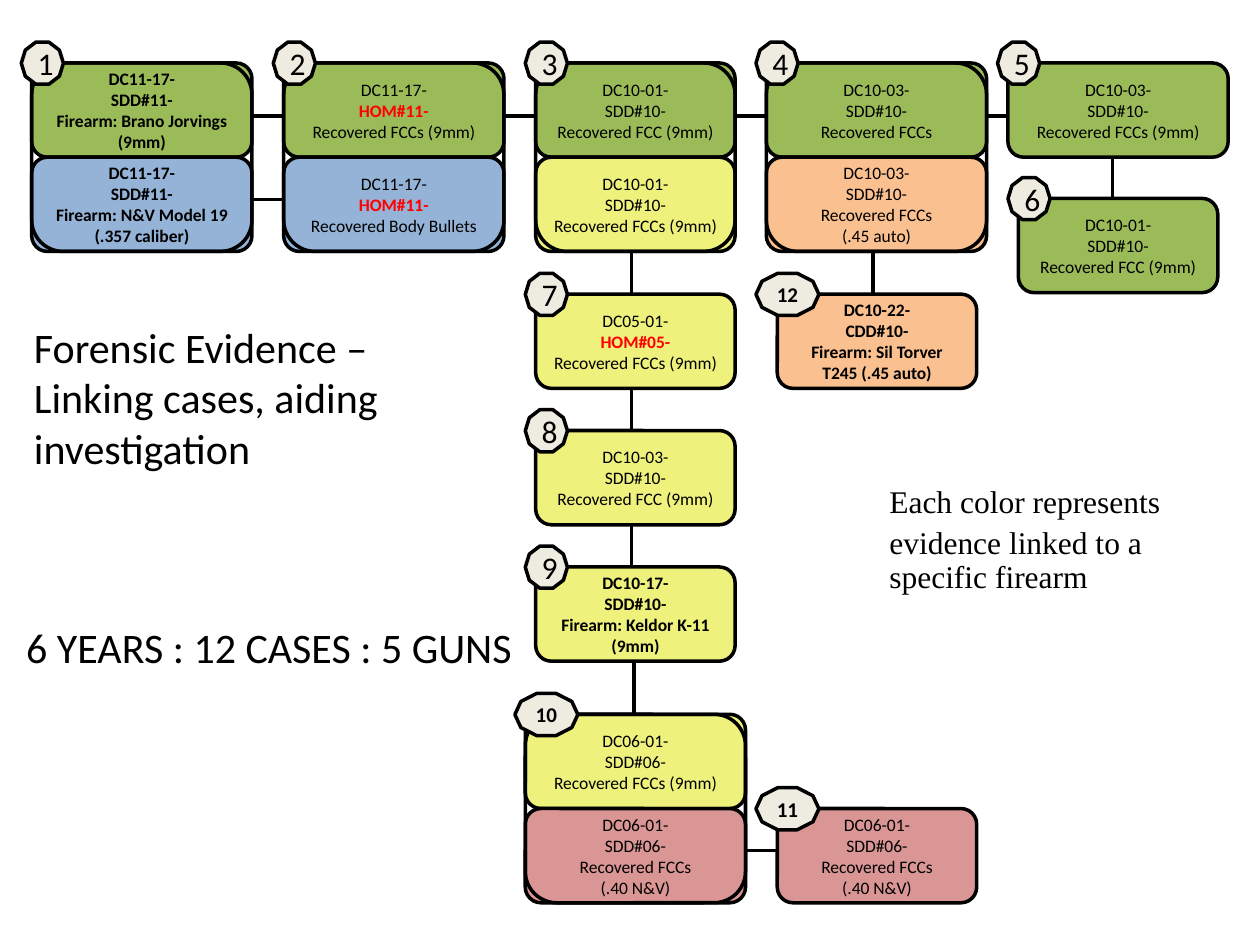
from lxml import etree
from pptx import Presentation
from pptx.dml.color import RGBColor
from pptx.enum.shapes import MSO_CONNECTOR, MSO_SHAPE
from pptx.enum.text import MSO_ANCHOR, MSO_AUTO_SIZE, PP_ALIGN
from pptx.oxml.ns import qn
from pptx.util import Cm, Pt

ROUNDED, DECAGON = MSO_SHAPE.ROUNDED_RECTANGLE, MSO_SHAPE.DECAGON
STRAIGHT = MSO_CONNECTOR.STRAIGHT
LEFT, CENTER = PP_ALIGN.LEFT, PP_ALIGN.CENTER

THEME = {
    "black": "000000", "red": "FF0000", "badge": "EEECE1",
    "green": "9BBB59", "blue": "95B3D7", "yellow": "EEF17B",
    "orange": "FAC090", "rose": "D99694",
    "font": "Calibri", "note font": "Times New Roman",
    "headline": 24, "note": 18, "box": 10, "badge size": 18, "small badge size": 12,
    "line": 2,
}


def add_outlined(preset, left, top, width, height, fill=None):
    shape = slide.shapes.add_shape(preset, Cm(left), Cm(top), Cm(width), Cm(height))
    shape.shadow.inherit = False
    shape.line.color.rgb = RGBColor.from_string(THEME["black"])
    shape.line.width = Pt(THEME["line"])
    if fill:
        shape.fill.solid()
        shape.fill.fore_color.rgb = RGBColor.from_string(THEME[fill])
    else:
        shape.fill.background()
    return shape


def write(shape, lines, size, align=LEFT, bold=False, font="font"):
    """Write one paragraph per line; homicide case numbers are bold red."""
    frame = shape.text_frame
    for index, line in enumerate(lines):
        paragraph = frame.add_paragraph() if index else frame.paragraphs[0]
        paragraph.alignment = align
        homicide = line.startswith("HOM#")
        run = paragraph.add_run()
        run.text = line
        run.font.name = THEME[font]
        run.font.size = Pt(THEME[size])
        run.font.bold = bold or homicide
        run.font.color.rgb = RGBColor.from_string(THEME["red" if homicide else "black"])


presentation = Presentation()
presentation.slide_width, presentation.slide_height = Cm(25.4), Cm(19.05)
slide = presentation.slides.add_slide(presentation.slide_layouts[5])

title = slide.shapes.title
title.left, title.top, title.width, title.height = Cm(0.43), Cm(6.35), Cm(9.32), Cm(3.33)
title.text_frame.auto_size = MSO_AUTO_SIZE.NONE
title.text_frame.vertical_anchor = MSO_ANCHOR.TOP
write(title, ["Forensic Evidence – Linking cases, aiding investigation"], "headline")

# Grid of the evidence boxes, in centimetres
BOX_HEIGHT, WIDE, NARROW = 1.9, 4.44, 4.02
COLUMNS = [0.64, 5.72, 10.8, 15.45, 20.32]
ROWS = [1.27, 5.93, 8.68, 11.43]
LAST_LEFT, LAST_TOP = 10.59, 14.4

# Case number, left, top, width, then one (colour, bold, lines) per stacked box
cases = [
    (1, COLUMNS[0], ROWS[0], WIDE, [
        ("green", True, ["DC11-17-", "SDD#11-", "Firearm: Brano Jorvings (9mm)"]),
        ("blue", True, ["DC11-17-", "SDD#11-", "Firearm: N&V Model 19 (.357 caliber)"])]),
    (2, COLUMNS[1], ROWS[0], WIDE, [
        ("green", False, ["DC11-17-", "HOM#11-", "Recovered FCCs (9mm)"]),
        ("blue", False, ["DC11-17-", "HOM#11-", "Recovered Body Bullets"])]),
    (3, COLUMNS[2], ROWS[0], NARROW, [
        ("green", False, ["DC10-01-", "SDD#10-", "Recovered FCC (9mm)"]),
        ("yellow", False, ["DC10-01-", "SDD#10-", "Recovered FCCs (9mm)"])]),
    (4, COLUMNS[3], ROWS[0], WIDE, [
        ("green", False, ["DC10-03-", "SDD#10-", "Recovered FCCs"]),
        ("orange", False, ["DC10-03-", "SDD#10-", "Recovered FCCs", "(.45 auto)"])]),
    (5, COLUMNS[4], ROWS[0], WIDE, [
        ("green", False, ["DC10-03-", "SDD#10-", "Recovered FCCs (9mm)"])]),
    (6, 20.53, 4.0, NARROW, [
        ("green", False, ["DC10-01-", "SDD#10-", "Recovered FCC (9mm)"])]),
    (7, COLUMNS[2], ROWS[1], NARROW, [
        ("yellow", False, ["DC05-01-", "HOM#05-", "Recovered FCCs (9mm)"])]),
    (8, COLUMNS[2], ROWS[2], NARROW, [
        ("yellow", False, ["DC10-03-", "SDD#10-", "Recovered FCC (9mm)"])]),
    (9, COLUMNS[2], ROWS[3], NARROW, [
        ("yellow", True, ["DC10-17-", "SDD#10-", "Firearm: Keldor K-11 (9mm)"])]),
    (10, LAST_LEFT, LAST_TOP, WIDE, [
        ("yellow", False, ["DC06-01-", "SDD#06-", "Recovered FCCs (9mm)"]),
        ("rose", False, ["DC06-01-", "SDD#06-", "Recovered FCCs", "(.40 N&V)"])]),
    (11, 15.67, LAST_TOP + BOX_HEIGHT, NARROW, [
        ("rose", False, ["DC06-01-", "SDD#06-", "Recovered FCCs", "(.40 N&V)"])]),
    (12, 15.67, ROWS[1], NARROW, [
        ("orange", True, ["DC10-22-", "CDD#10-", "Firearm: Sil Torver T245 (.45 auto)"])]),
]

# Links between cases: start x, start y, end x, end y
FIRST_END = ROWS[0] + 2 * BOX_HEIGHT
links = [(12.73, top, 12.73, bottom) for top, bottom in zip(
    [FIRST_END, ROWS[1] + BOX_HEIGHT, ROWS[2] + BOX_HEIGHT], ROWS[1:])]
links += [(left + width, 2.34, right, 2.34) for left, width, right in zip(
    COLUMNS, [WIDE, WIDE, NARROW, WIDE], COLUMNS[1:])]
links += [
    (COLUMNS[0] + WIDE, 4.02, COLUMNS[1], 4.02),
    (12.78, ROWS[3] + BOX_HEIGHT, 12.78, LAST_TOP),
    (17.6, FIRST_END, 17.6, ROWS[1]),
    (22.43, ROWS[0] + BOX_HEIGHT, 22.43, 4.0),
    (LAST_LEFT + WIDE, 17.15, 15.67, 17.15),
]
for start_x, start_y, end_x, end_y in links:
    link = slide.shapes.add_connector(STRAIGHT, Cm(start_x), Cm(start_y), Cm(end_x), Cm(end_y))
    link.line.color.rgb = RGBColor.from_string(THEME["black"])
    link.line.width = Pt(THEME["line"])
    etree.SubElement(link.element.spPr, qn("a:effectLst"))

for number, left, top, width, boxes in cases:
    for index, (colour, bold, lines) in enumerate(boxes):
        box = add_outlined(ROUNDED, left, top + index * BOX_HEIGHT, width, BOX_HEIGHT, colour)
        write(box, lines, "box", CENTER, bold)
    if len(boxes) > 1:
        add_outlined(ROUNDED, left, top, width, len(boxes) * BOX_HEIGHT)
    two_digits = number > 9
    badge_shift = 0.43 if number > 10 else 0.21
    badge = add_outlined(DECAGON, left - badge_shift, top - 0.42,
                         1.27 if two_digits else 0.85, 0.85, "badge")
    write(badge, [str(number)], "small badge size" if two_digits else "badge size",
          CENTER, two_digits)

summary = slide.shapes.add_textbox(Cm(0.28), Cm(12.4), Cm(10.36), Cm(1.27))
summary.text_frame.word_wrap = False
write(summary, ["6 YEARS : 12 CASES : 5 GUNS"], "headline")

note = slide.shapes.add_textbox(Cm(17.68), Cm(9.68), Cm(7.09), Cm(4.19))
note.text_frame.word_wrap = True
write(note, ["Each color represents", "evidence linked to a specific firearm"],
      "note", font="note font")
for paragraph in note.text_frame.paragraphs:
    paragraph.line_spacing = 0.9
note.text_frame.paragraphs[1].space_before = Pt(4)

presentation.save("out.pptx")
